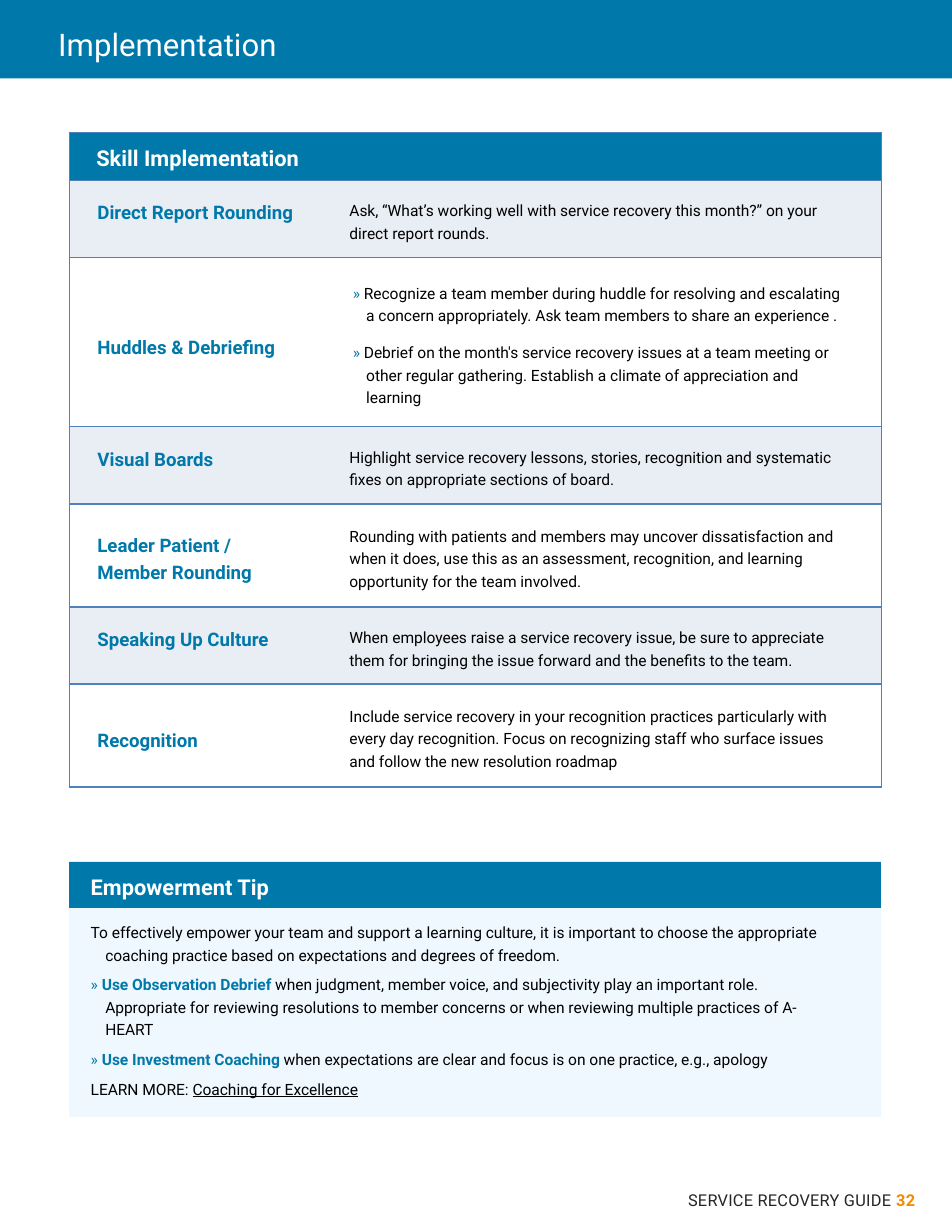
from lxml.etree import SubElement
from pptx import Presentation
from pptx.dml.color import RGBColor
from pptx.enum.shapes import MSO_SHAPE
from pptx.enum.text import MSO_ANCHOR, PP_ALIGN
from pptx.oxml.ns import qn
from pptx.util import Inches, Pt

BLUE, LINE, BAND = "0078A9", "4F81BD", "E9EDF4"
WHITE, BLACK, PALE = "FFFFFF", "000000", "F0F8FF"
LEFT, WIDE = 7.29, 85.29  # shared edges of both tables, in percent


def color(code):
    return RGBColor.from_string(code)


def write(frame, paras, size=10, ink=BLACK, bold=False, indent=(0, 0),
          line=None, gap=0, align=None, track=None):
    """Each paragraph is a list of (text, overrides) runs."""
    frame.word_wrap = True
    for n, runs in enumerate(paras):
        para = frame.paragraphs[0] if n == 0 else frame.add_paragraph()
        props = para._p.get_or_add_pPr()
        props.set("marL", str(Inches(indent[0])))
        props.set("indent", str(Inches(indent[1])))
        para.alignment = align
        if line:
            para.line_spacing = line
        if n and gap:
            para.space_before = Pt(gap)
        for text, over in runs:
            run = para.add_run()
            run.text = text
            font = run.font
            font.name, font.size = "Roboto", Pt(size)
            font.bold = over.get("bold", bold)
            font.underline = over.get("under")
            font.color.rgb = color(over.get("ink", ink))
            if track:
                run._r.get_or_add_rPr().set("spc", str(track))


class Page:
    font = "Roboto"

    def __init__(self, deck):
        self.wide, self.high = deck.slide_width, deck.slide_height
        self.slide = deck.slides.add_slide(deck.slide_layouts[6])

    def box(self, x, y, w, h):
        """Turn percentages of the slide into lengths."""
        return (int(self.wide * x / 100), int(self.high * y / 100),
                int(self.wide * w / 100), int(self.high * h / 100))

    def bar(self, x, y, w, h, fill):
        shape = self.slide.shapes.add_shape(
            MSO_SHAPE.RECTANGLE, *self.box(x, y, w, h))
        shape.shadow.inherit = False
        shape.fill.solid()
        shape.fill.fore_color.rgb = color(fill)
        shape.line.fill.background()

    def text(self, x, y, w, h, paras, inset=(0, 0), **style):
        frame = self.slide.shapes.add_textbox(
            *self.box(x, y, w, h)).text_frame
        frame.margin_left = frame.margin_right = Inches(inset[0])
        frame.margin_top = frame.margin_bottom = Inches(inset[1])
        frame.vertical_anchor = MSO_ANCHOR.MIDDLE
        write(frame, paras, **style)

    def table(self, x, y, cols, rows):
        shape = self.slide.shapes.add_table(
            len(rows), len(cols), *self.box(x, y, sum(cols), sum(rows)))
        grid = shape.table
        grid.first_row = grid.horz_banding = False
        for col, share in zip(grid.columns, cols):
            col.width = int(self.wide * share / 100)
        for row, share in zip(grid.rows, rows):
            row.height = int(self.high * share / 100)
        return grid

    def cell(self, cell, fill, paras=(), sides="", edge=LINE, weight=1,
             pad=(0, 0, 0), anchor=MSO_ANCHOR.MIDDLE, **style):
        """pad is top, right, bottom in inches."""
        cell.margin_left = 0
        cell.margin_top, cell.margin_right, cell.margin_bottom = map(
            Inches, pad)
        cell.vertical_anchor = anchor
        props = cell._tc.get_or_add_tcPr()
        for side in "LRTB":
            rule = SubElement(props, qn("a:ln" + side), w=str(Pt(weight)))
            if side in sides:
                ink = SubElement(rule, qn("a:solidFill"))
                SubElement(ink, qn("a:srgbClr"), val=edge)
            else:
                SubElement(rule, qn("a:noFill"))
        cell.fill.solid()
        cell.fill.fore_color.rgb = color(fill)
        if paras:
            write(cell.text_frame, paras, **style)


def plain(text):
    return [(text, {})]


def point(text, lead=""):
    runs = [("» ", {"ink": BLUE})]
    if lead:
        runs.append((lead, {"ink": BLUE, "bold": True}))
    return runs + plain(text)


# label, body paragraphs, row height, label padding, label line spacing
LOW, MID = (0, 0, 0.1), (0.2, 0, 0.1)
SKILLS = [
    ("Direct Report Rounding", [plain(
        "Ask, “What’s working well with service recovery this month?” on "
        "your direct report rounds.")], 6.27, LOW, None),
    ("Huddles & Debriefing", [
        point("Recognize a team member during huddle for resolving and "
              "escalating a concern appropriately. Ask team members to "
              "share an experience ."),
        point("Debrief on the month's service recovery issues at a team "
              "meeting or other regular gathering. Establish a climate of "
              "appreciation and learning")], 13.73, MID, None),
    ("Visual Boards", [plain(
        "Highlight service recovery lessons, stories, recognition and "
        "systematic fixes on appropriate sections of board.")],
     6.27, LOW, None),
    ("Leader Patient / Member Rounding", [plain(
        "Rounding with patients and members may uncover dissatisfaction "
        "and when it does, use this as an assessment, recognition, and "
        "learning opportunity for the team involved.")],
     8.36, (0.13, 0.4, 0.1), 1.25),
    ("Speaking Up Culture", [plain(
        "When employees raise a service recovery issue, be sure to "
        "appreciate them for bringing the issue forward and the benefits "
        "to the team.")], 6.27, LOW, None),
    ("Recognition", [plain(
        "Include service recovery in your recognition practices "
        "particularly with every day recognition. Focus on recognizing "
        "staff who surface issues and follow the new resolution roadmap")],
     8.36, MID, None),
]
TIPS = [
    plain("To effectively empower your team and support a learning culture, "
          "it is important to choose the appropriate coaching practice "
          "based on expectations and degrees of freedom."),
    point("when judgment, member voice, and subjectivity play an important "
          "role. Appropriate for reviewing resolutions to member concerns "
          "or when reviewing multiple practices of A-HEART",
          "Use Observation Debrief "),
    point("when expectations are clear and focus is on one practice, e.g., "
          "apology", "Use Investment Coaching "),
    [("LEARN MORE: ", {}), ("Coaching for Excellence", {"under": True})],
]


def main():
    deck = Presentation()
    deck.slide_width, deck.slide_height = Inches(8.5), Inches(11)
    page = Page(deck)
    head = dict(size=14, ink=WHITE, bold=True, pad=(0.05, 0, 0))

    # Title band and footer
    page.bar(0, 0, 100, 6.36, BLUE)
    page.text(6.12, 2, 88, 3.09, [plain("Implementation")],
              size=20, ink=WHITE)
    page.text(2.94, 96.09, 94.35, 2.55,
              [[("SERVICE RECOVERY GUIDE ", {}),
                ("32", {"ink": "F38B00", "bold": True})]],
              inset=(0.1, 0.05), size=10.5, ink="262626",
              align=PP_ALIGN.RIGHT, track=20)

    # Skill table
    grid = page.table(LEFT, 10.73, [26, WIDE - 26],
                      [3.91] + [skill[2] for skill in SKILLS])
    grid.cell(0, 0).merge(grid.cell(0, 1))
    page.cell(grid.cell(0, 0), BLUE, [plain("Skill Implementation")],
              "LRTB", indent=(0.24, 0), **head)
    page.cell(grid.cell(0, 1), BLUE, sides="RTB")
    for n, (label, body, _, pad, line) in enumerate(SKILLS, 1):
        fill = BAND if n % 2 else WHITE
        page.cell(grid.cell(n, 0), fill, [plain(label)], "LTB", pad=pad,
                  size=12, ink=BLUE, bold=True, indent=(0.25, 0), line=line)
        page.cell(grid.cell(n, 1), fill, body, "RTB", pad=(0.13, 0.3, 0.1),
                  indent=(0.44, -0.12) if len(body) > 1 else (0.29, 0),
                  line=1.25, gap=9)

    # Tip table
    grid = page.table(LEFT, 69.91, [WIDE], [3.82, 16.91])
    page.cell(grid.cell(0, 0), BLUE, [plain("Empowerment Tip")], "T",
              edge="EDEFBF", weight=0.5, indent=(0.19, 0), **head)
    page.cell(grid.cell(1, 0), PALE, TIPS, pad=(0.1, 0.46, 0),
              anchor=MSO_ANCHOR.TOP, indent=(0.32, -0.13), line=1.25,
              gap=4.5)
    deck.save("out.pptx")


if __name__ == "__main__":
    main()
